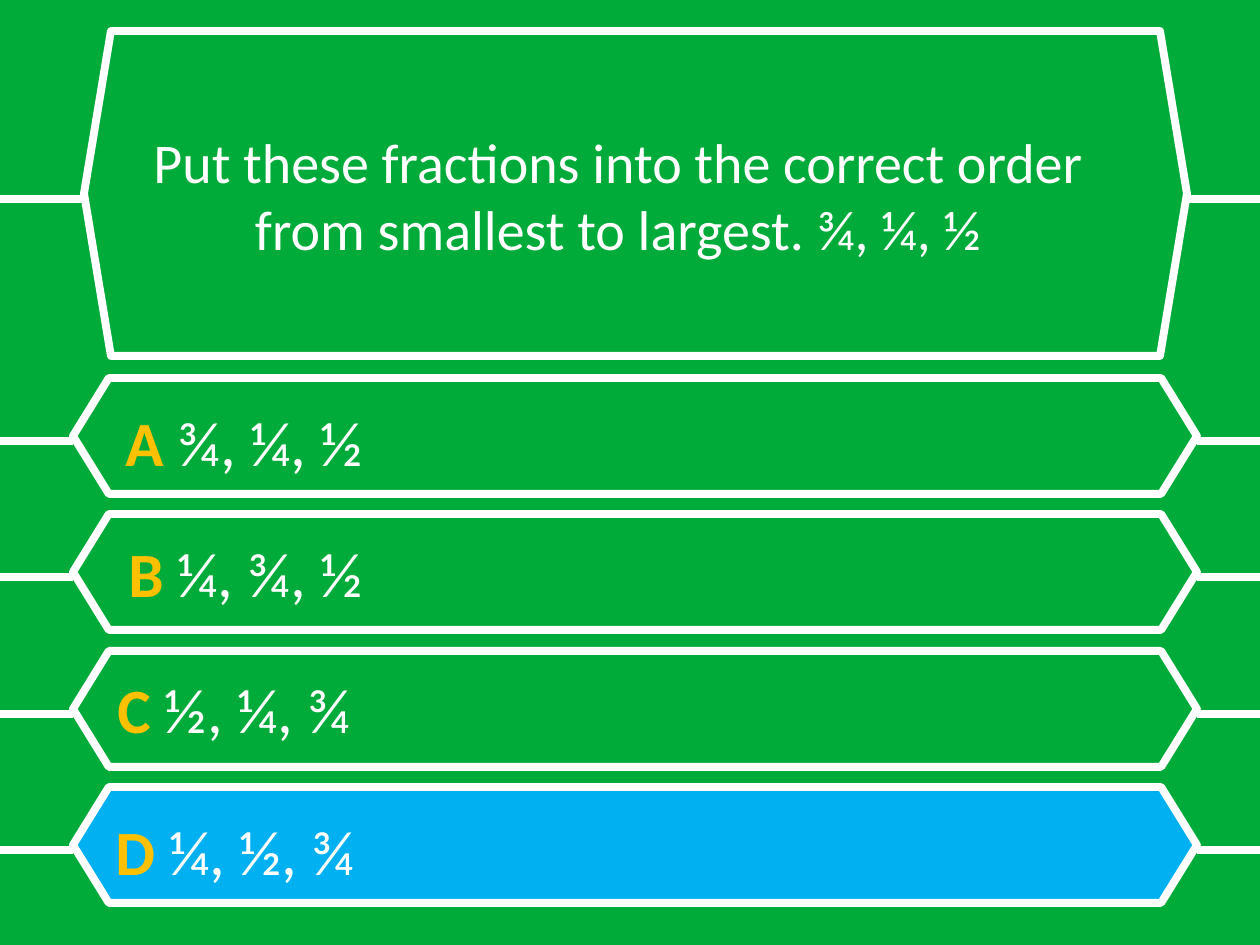
"""Build a quiz slide with one question and four framed answers."""
from dataclasses import dataclass

from lxml.etree import SubElement
from pptx import Presentation
from pptx.dml.color import RGBColor
from pptx.enum.shapes import MSO_CONNECTOR, MSO_SHAPE
from pptx.enum.text import MSO_ANCHOR, MSO_AUTO_SIZE, PP_ALIGN
from pptx.oxml.ns import qn
from pptx.slide import Slide
from pptx.util import Emu, Pt

PIXELS_PER_INCH = 126
SLIDE_WIDTH, SLIDE_HEIGHT = 1260, 945
GREEN, BLUE, GOLD, WHITE = "00AB39", "00B0F0", "FFC000", "FFFFFF"
FONT = "Calibri"
LINE_WIDTH = Pt(4.5)
QUESTION = "Put these fractions into the correct order from smallest to largest. ¾, ¼, ½"
FIRST_ANSWER_TOP = 378
TWO_ROW_STEP = 273


@dataclass(frozen=True)
class Frame:
    """A hexagon whose side wires reach the slide edges."""
    left: int
    top: int
    width: int
    height: int
    point: float
    wire_y: int
    fill: str | None = None


@dataclass(frozen=True)
class Answer:
    """A lettered answer and the place of its text."""
    letter: str
    text: str
    left: int
    top: int
    height: int = 89
    fill: str | None = None


ANSWERS = (
    Answer("A", "¾, ¼, ½", 113, 397),
    Answer("B", "¼, ¾, ½", 116, 528, height=165),
    Answer("C", "½, ¼, ¾", 105, 664),
    Answer("D", "¼, ½, ¾", 103, 806, fill=BLUE),
)


def px(length: int) -> Emu:
    """Turn pixels into EMU."""
    return Emu(round(length * 914400 / PIXELS_PER_INCH))


def color(value: str) -> RGBColor:
    """Turn a hex string into a colour."""
    return RGBColor.from_string(value)


def format_span(span, size: int, value: str, bold: bool = False) -> None:
    """Set the font of one run."""
    span.font.name = FONT
    span.font.size = Pt(size)
    span.font.bold = bold
    span.font.color.rgb = color(value)


def draw_wire(slide: Slide, start: int, end: int, y: int) -> None:
    """Draw a horizontal white line."""
    wire = slide.shapes.add_connector(
        MSO_CONNECTOR.STRAIGHT, px(start), px(y), px(end), px(y))
    wire.line.width = LINE_WIDTH
    wire.line.color.rgb = color(WHITE)
    SubElement(wire.element.spPr, qn("a:effectLst"))


def draw_frame(slide: Slide, frame: Frame) -> None:
    """Draw a hexagon and its two side wires."""
    hexagon = slide.shapes.add_shape(
        MSO_SHAPE.HEXAGON, px(frame.left), px(frame.top), px(frame.width), px(frame.height))
    hexagon.adjustments[0] = frame.point
    hexagon.shadow.inherit = False
    hexagon.line.width = LINE_WIDTH
    hexagon.line.color.rgb = color(WHITE)
    if frame.fill:
        hexagon.fill.solid()
        hexagon.fill.fore_color.rgb = color(frame.fill)
    else:
        hexagon.fill.background()
    draw_wire(slide, frame.left, 0, frame.wire_y)
    draw_wire(slide, SLIDE_WIDTH, frame.left + frame.width, frame.wire_y)


def draw_question(slide: Slide) -> None:
    """Place and format the title."""
    title = slide.shapes.title
    title.left, title.top, title.width, title.height = px(88), px(147), px(1061), px(163)
    text_frame = title.text_frame
    text_frame.text = QUESTION
    text_frame.word_wrap = True
    text_frame.auto_size = MSO_AUTO_SIZE.NONE
    text_frame.vertical_anchor = MSO_ANCHOR.BOTTOM
    text_frame.margin_bottom = px(48)
    para = text_frame.paragraphs[0]
    para.alignment = PP_ALIGN.CENTER
    format_span(para.runs[0], 32, WHITE)


def draw_answer(slide: Slide, answer: Answer) -> None:
    """Write the letter and the text of an answer."""
    box = slide.shapes.add_textbox(
        px(answer.left), px(answer.top), px(1082), px(answer.height))
    box.text_frame.word_wrap = True
    para = box.text_frame.paragraphs[0]
    for text, value, bold in ((f"{answer.letter} ", GOLD, True), (answer.text, WHITE, False)):
        span = para.add_run()
        span.text = text
        format_span(span, 36, value, bold)


def main() -> None:
    """Build and save the deck."""
    deck = Presentation()
    deck.slide_width, deck.slide_height = px(SLIDE_WIDTH), px(SLIDE_HEIGHT)
    slide = deck.slides.add_slide(deck.slide_layouts[5])
    slide.background.fill.solid()
    slide.background.fill.fore_color.rgb = color(GREEN)
    draw_frame(slide, Frame(84, 31, 1103, 325, 0.083, 199))
    draw_question(slide)
    for row, answer in enumerate(ANSWERS):
        top = FIRST_ANSWER_TOP + row * TWO_ROW_STEP // 2
        draw_frame(slide, Frame(73, top, 1124, 116, 0.309, top + 63, answer.fill))
        draw_answer(slide, answer)
    deck.save("out.pptx")


if __name__ == "__main__":
    main()
